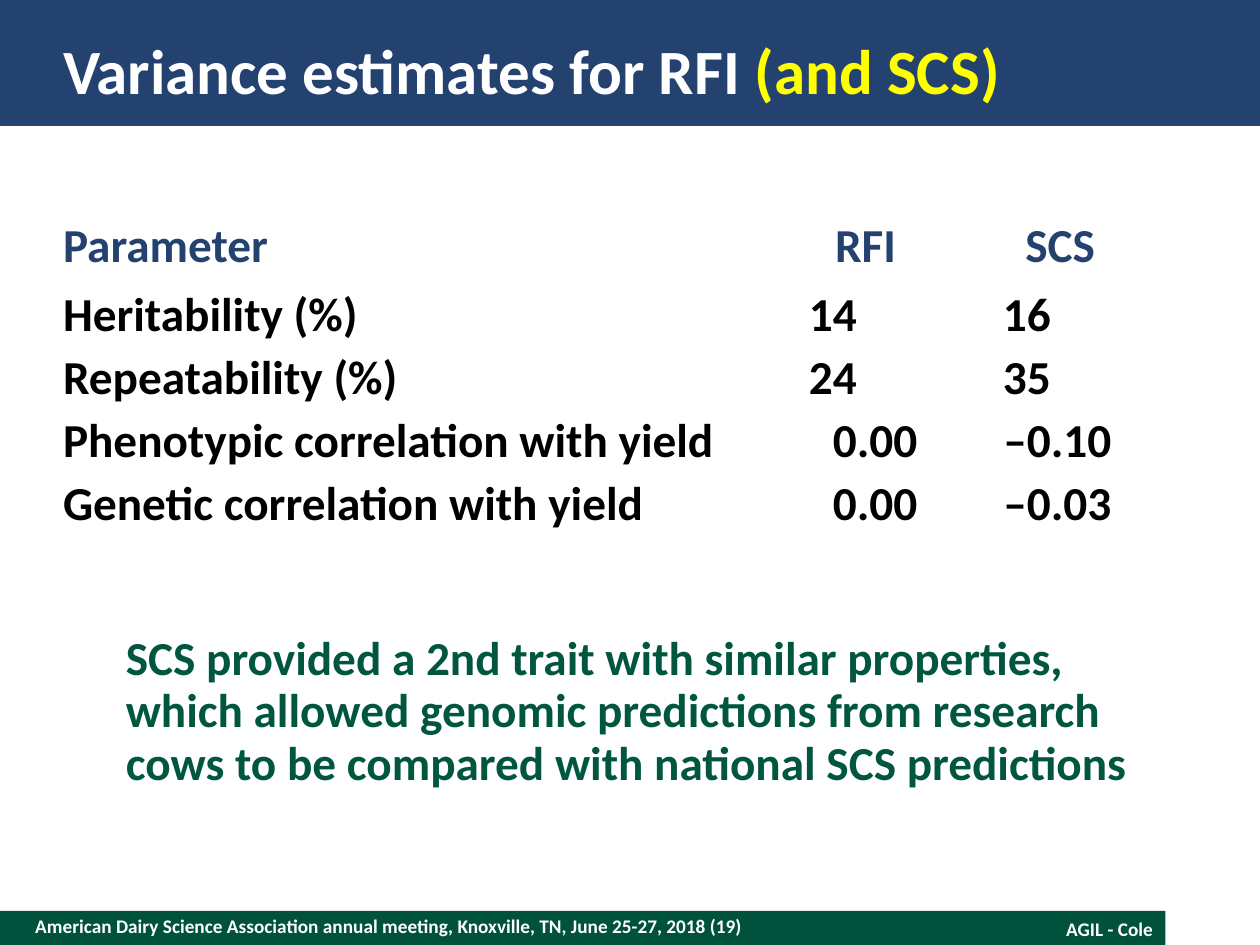
from lxml import etree
from pptx import Presentation
from pptx.dml.color import RGBColor
from pptx.enum import shapes, text
from pptx.oxml.ns import qn
from pptx.util import Emu, Inches, Pt

WHITE = RGBColor(0xFF, 0xFF, 0xFF)
BLACK = RGBColor(0, 0, 0)
NAVY = RGBColor(0x24, 0x42, 0x70)
YELLOW = RGBColor(0xFF, 0xFF, 0)
BAR_GREEN = RGBColor(0, 0x52, 0x3C)
TEXT_GREEN = RGBColor(0, 0x56, 0x3F)

TITLE = [("Variance estimates for RFI ", WHITE), ("(and SCS)", YELLOW)]
MEETING = "American Dairy Science Association annual meeting, Knoxville, TN, June 25-27, 2018 (19)"
AUTHOR = "AGIL - Cole"
CONCLUSION = (
    "SCS provided a 2nd trait with similar properties, which allowed genomic "
    "predictions from research cows to be compared with national SCS predictions"
)
ESTIMATES = [
    ("Parameter", "RFI", "SCS"),
    ("Heritability (%)", "14", "16"),
    ("Repeatability (%)", "24", "35"),
    ("Phenotypic correlation with yield", "0.00", "–0.10"),
    ("Genetic correlation with yield", "0.00", "–0.03"),
]
COLUMN_WIDTHS = [5.8, 1.14, 1.95]
DECIMAL_TABS = [None, 0.5, 0.9]
HEADER_GAP = 0.05
ROW_HEIGHT = 0.5


def style(paragraph, size, color):
    paragraph.font.name = "Calibri"
    paragraph.font.size = Pt(size)
    paragraph.font.bold = True
    paragraph.font.color.rgb = color


def clear_margins(frame):
    frame.margin_left = frame.margin_right = 0
    frame.margin_top = frame.margin_bottom = 0


def add_bar(page, area, color):
    bar = page.shapes.add_shape(shapes.MSO_SHAPE.RECTANGLE, *map(Inches, area))
    bar.shadow.inherit = False
    bar.fill.solid()
    bar.fill.fore_color.rgb = color
    bar.line.fill.background()


def add_text(page, area, wording, size, color):
    frame = page.shapes.add_textbox(*map(Inches, area)).text_frame
    frame.word_wrap = True
    paragraph = frame.paragraphs[0]
    paragraph.text = wording
    style(paragraph, size, color)
    return frame


def add_decimal_tab(paragraph, position):
    properties = paragraph._p.get_or_add_pPr()
    tabs = etree.SubElement(properties, qn("a:tabLst"))
    etree.SubElement(tabs, qn("a:tab"), pos=str(Inches(position)), algn="dec")


def fill_title(page):
    title = page.shapes.title
    title.element.getparent().append(title.element)
    title.left, title.top, title.width, title.height = map(Inches, (0.5, 0.2, 9, 0.7))
    frame = title.text_frame
    clear_margins(frame)
    frame.auto_size = text.MSO_AUTO_SIZE.NONE
    frame.vertical_anchor = text.MSO_ANCHOR.MIDDLE
    paragraph = frame.paragraphs[0]
    paragraph.alignment = text.PP_ALIGN.LEFT
    style(paragraph, 36, WHITE)
    for wording, color in TITLE:
        span = paragraph.add_run()
        span.text = wording
        span.font.name = "Calibri"
        span.font.size = Pt(36)
        span.font.bold = True
        span.font.color.rgb = color


def add_estimates(page):
    height = ROW_HEIGHT * len(ESTIMATES) + HEADER_GAP
    area = map(Inches, (0.5, 1.68, sum(COLUMN_WIDTHS), height))
    table = page.shapes.add_table(len(ESTIMATES), len(COLUMN_WIDTHS), *area).table
    table.first_row = table.horz_banding = False
    for column, width in zip(table.columns, COLUMN_WIDTHS):
        column.width = Inches(width)
    for row_index, values in enumerate(ESTIMATES):
        header = row_index == 0
        gap = HEADER_GAP if header else 0
        table.rows[row_index].height = Inches(ROW_HEIGHT + gap)
        for column_index, value in enumerate(values):
            cell = table.cell(row_index, column_index)
            cell.fill.background()
            clear_margins(cell)
            cell.margin_bottom = Inches(gap)
            paragraph = cell.text_frame.paragraphs[0]
            paragraph.line_spacing = Pt(36)
            tab = DECIMAL_TABS[column_index]
            if header and tab:
                paragraph.alignment = text.PP_ALIGN.CENTER
            elif tab:
                add_decimal_tab(paragraph, tab)
                value = "\t" + value
            paragraph.text = value
            style(paragraph, 27, NAVY if header else BLACK)


def main():
    deck = Presentation()
    deck.slide_width, deck.slide_height = Inches(10), Inches(7.5)
    page = deck.slides.add_slide(deck.slide_layouts.get_by_name("Title Only"))

    add_bar(page, (0, 7.23, 9.25, 0.27), BAR_GREEN)
    add_bar(page, (0, 0, 10, 1), NAVY)
    meeting = add_text(page, (0.28, 7.2, 7.7, 0.3), MEETING, 11, WHITE)
    clear_margins(meeting)
    meeting.vertical_anchor = text.MSO_ANCHOR.MIDDLE
    author = add_text(page, (7.25, 7.23, 2, 0.29), AUTHOR, 11, WHITE)
    author.paragraphs[0].alignment = text.PP_ALIGN.RIGHT

    fill_title(page)
    add_estimates(page)
    conclusion = add_text(page, (0.9, 4.97, 8.19, 1.36), CONCLUSION, 27, TEXT_GREEN)
    conclusion.paragraphs[0].line_spacing = Pt(30)

    deck.save("out.pptx")


if __name__ == "__main__":
    main()
